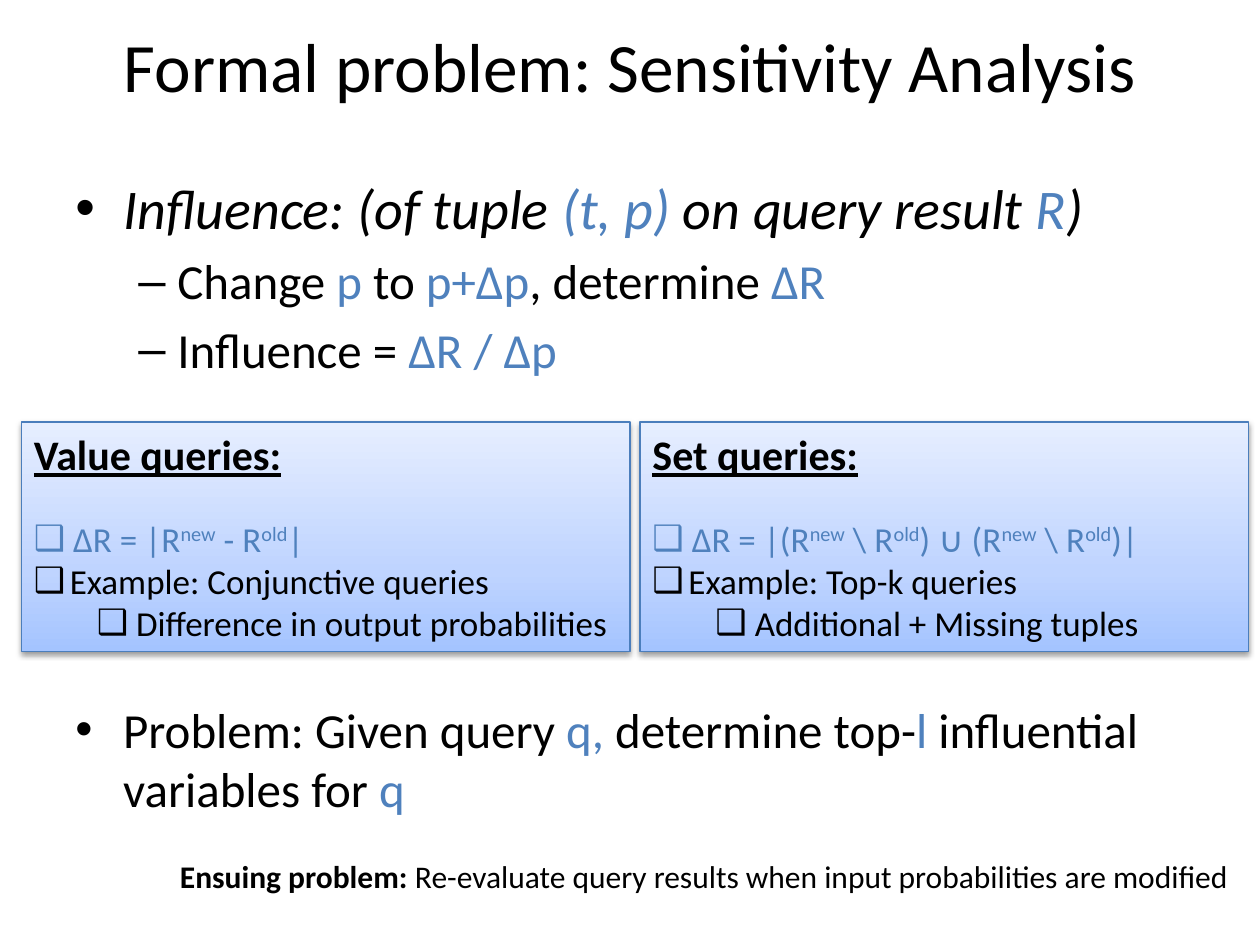
import copy

import pptx
import pptx.dml.color
import pptx.enum.shapes
import pptx.enum.text
import pptx.oxml
import pptx.oxml.ns
import pptx.oxml.xmlchemy
import pptx.util

FONT = "Calibri"
BLACK = "000000"
BLUE = "4F81BD"
EDGE = "4B7EBC"
CARD_STOPS = [(0, "A4C4FF"), (0.35, "BFD4FF"), (1, "E6EEFF")]
SHADOW_XML = (
    '<a:effectLst %s><a:outerShdw blurRad="39370" dist="20320" dir="5400000" rotWithShape="0">'
    '<a:srgbClr val="000000"><a:alpha val="38000"/></a:srgbClr></a:outerShdw></a:effectLst>'
    % pptx.oxml.ns.nsdecls("a")
)


def rgb(value):
    return pptx.dml.color.RGBColor.from_string(value)


def add_run(paragraph, text, *, size, color=BLACK, bold=False, italic=False,
            underline=False, raised=False):
    run = paragraph.add_run()
    run.text = text
    font = run.font
    font.name, font.size = FONT, pptx.util.Pt(size)
    font.bold, font.italic, font.underline = bold, italic, underline
    font.color.rgb = rgb(color)
    if raised:
        run._r.get_or_add_rPr().set("baseline", "30000")


def add_paragraph(frame, runs, *, level=0, bullet=None, margin=0, hanging=0,
                  before=0, after=0, centered=False, **text_format):
    """Append a paragraph; each run is plain text or (text, format overrides)."""
    first = frame.paragraphs[0]
    paragraph = frame.add_paragraph() if first.runs else first
    properties = paragraph._p.get_or_add_pPr()
    if bullet:
        properties.set("marL", str(int(pptx.util.Inches(margin))))
        properties.set("indent", str(-int(pptx.util.Inches(hanging))))
        for tag, name, value in (("a:buFont", "typeface", "Arial"),
                                 ("a:buChar", "char", bullet)):
            element = pptx.oxml.xmlchemy.OxmlElement(tag)
            element.set(name, value)
            properties.append(element)
    alignment = pptx.enum.text.PP_ALIGN
    paragraph.level = level
    paragraph.alignment = alignment.CENTER if centered else alignment.LEFT
    paragraph.space_before = pptx.util.Pt(before)
    paragraph.space_after = pptx.util.Pt(after)
    for run in runs:
        text, changes = (run, {}) if isinstance(run, str) else run
        add_run(paragraph, text, **{**text_format, **changes})


def blue(text):
    return text, {"color": BLUE}


def raised(text):
    return text, {"raised": True}


def add_text_box(slide, box, anchor=pptx.enum.text.MSO_ANCHOR.TOP):
    frame = slide.shapes.add_textbox(*map(pptx.util.Inches, box)).text_frame
    frame.word_wrap = True
    frame.vertical_anchor = anchor
    return frame


def add_title(slide, box):
    frame = add_text_box(slide, box, pptx.enum.text.MSO_ANCHOR.MIDDLE)
    add_paragraph(frame, ["Formal problem: Sensitivity Analysis"], size=39.6, centered=True)


def add_influence(slide, box):
    frame = add_text_box(slide, box)
    add_paragraph(frame, ["Influence: (of tuple ", blue("(t, p)"), " on query result ",
                          blue("R"), ")"],
                  bullet="•", margin=0.38, hanging=0.38, size=32, italic=True)
    for runs in (
        ["Change ", blue("p"), " to ", blue("p+∆p"), ", determine ", blue("∆R")],
        ["Influence =", blue(" ∆R / ∆p")],
    ):
        add_paragraph(frame, runs, level=1, bullet="–", margin=0.81, hanging=0.31,
                      before=5.6, size=28)


def add_query_card(slide, box, heading, formula, example, detail):
    card = slide.shapes.add_shape(pptx.enum.shapes.MSO_SHAPE.RECTANGLE,
                                  *map(pptx.util.Inches, box))

    # Vertical gradient with a third stop, thin edge, soft shadow
    card.fill.gradient()
    card.fill.gradient_angle = 90
    stop_list = card._element.spPr.find(".//" + pptx.oxml.ns.qn("a:gsLst"))
    stop_list.append(copy.deepcopy(stop_list[-1]))
    for stop, (position, color) in zip(card.fill.gradient_stops, CARD_STOPS):
        stop.position = position
        stop.color.rgb = rgb(color)
    card.line.color.rgb = rgb(EDGE)
    card.line.width = pptx.util.Pt(0.75)
    card._element.spPr.append(pptx.oxml.parse_xml(SHADOW_XML))

    # Heading and bulleted lines
    frame = card.text_frame
    frame.word_wrap = True
    frame.vertical_anchor = pptx.enum.text.MSO_ANCHOR.TOP
    add_paragraph(frame, [heading], size=24, bold=True, underline=True, after=22)
    add_paragraph(frame, formula, bullet="❑", size=20, color=BLUE)
    add_paragraph(frame, [raised(" "), example], bullet="❑", size=20)
    add_paragraph(frame, [" " + detail], level=1, bullet="❑", margin=0.5, size=20)


def add_query_cards(slide, box):
    left, top, width, height = box
    gap = 0.08
    card_width = (width - gap) / 2
    new, old = raised("new"), raised("old")
    cards = [
        ("Value queries:", [" ∆R = |R", new, " - R", old, "|"],
         "Example: Conjunctive queries", "Difference in output probabilities"),
        ("Set queries:",
         [" ∆R = |(R", new, " \\ R", old, ") ∪ (R", new, " \\ R", old, ")|"],
         "Example: Top-k queries", "Additional + Missing tuples"),
    ]
    for index, content in enumerate(cards):
        card_left = left + index * (card_width + gap)
        add_query_card(slide, (card_left, top, card_width, height), *content)


def add_problem(slide, box):
    frame = add_text_box(slide, box)
    add_paragraph(frame, ["Problem: Given query ", blue("q, "), "determine top-", blue("l "),
                          "influential variables for ", blue("q")],
                  bullet="•", margin=0.38, hanging=0.38, size=28)


def add_ensuing_problem(slide, box):
    frame = add_text_box(slide, box)
    add_paragraph(frame, [("Ensuing problem:", {"bold": True}),
                          " Re-evaluate query results when input probabilities are modified"],
                  size=18)


def main():
    presentation = pptx.Presentation()
    presentation.slide_width = pptx.util.Inches(10)
    presentation.slide_height = pptx.util.Inches(7.5)
    slide = presentation.slides.add_slide(presentation.slide_layouts[6])
    add_title(slide, (0.5, 0, 9, 1.03))
    add_influence(slide, (0.5, 1.33, 9, 2.08))
    add_query_cards(slide, (0.17, 3.35, 9.74, 1.82))
    add_problem(slide, (0.5, 5.5, 9, 1.25))
    add_ensuing_problem(slide, (1.33, 6.75, 8.58, 0.4))
    presentation.save("out.pptx")


if __name__ == "__main__":
    main()
